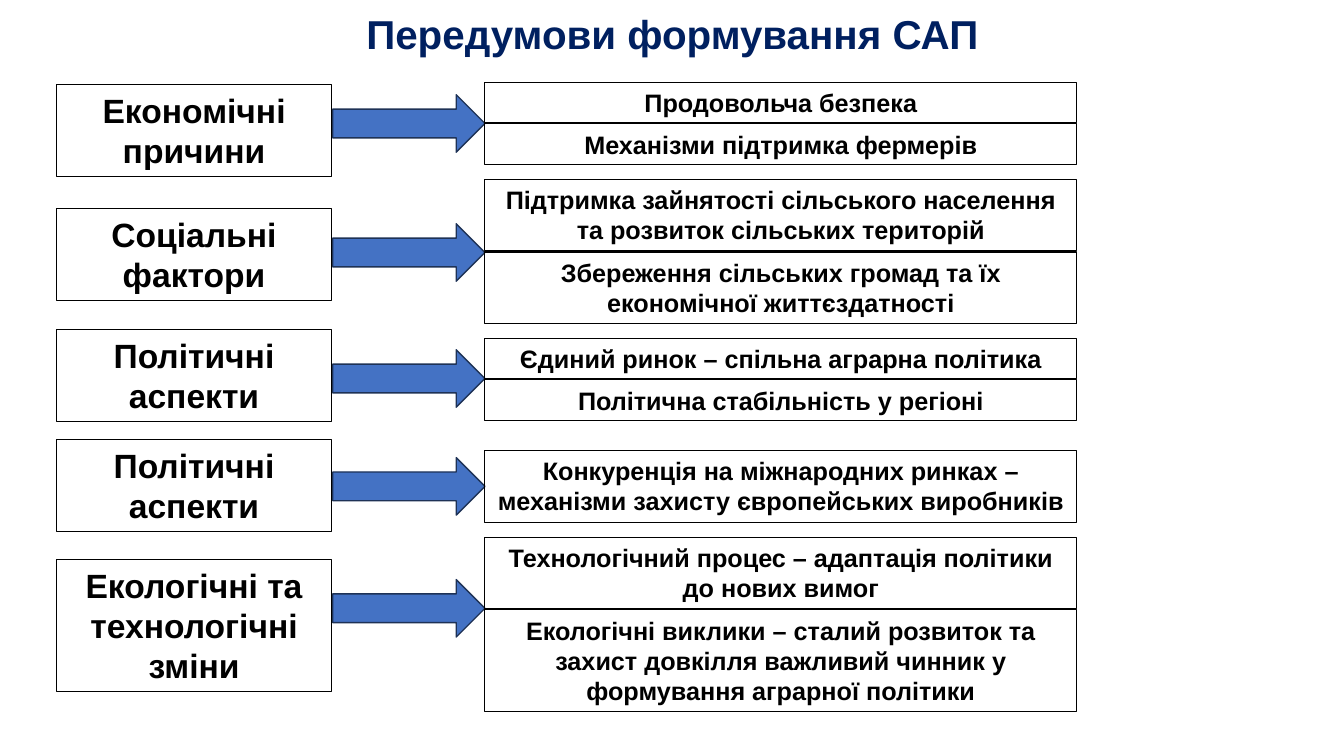
from pptx import Presentation
from pptx import util as u
from pptx.dml.color import RGBColor
from pptx.enum import shapes, text

COLORS = {"title": "002060", "text": "000000", "border": "000000",
          "arrow": "4472C4", "arrow_line": "1E3256"}
FORMATS = {
    "title": {"name": "Arial", "size": u.Pt(28.8), "bold": True},
    "cause": {"name": "Arial", "size": u.Pt(24), "bold": True},
    "detail": {"name": "Arial", "size": u.Pt(18), "bold": True},
}
CAUSE_X, CAUSE_W = 0.56, 2.73
ARROW_X, ARROW_W, ARROW_H = 3.3, 1.51, 0.57
DETAIL_X, DETAIL_W, DETAIL_GAP = 4.81, 5.87, 0.01

GROUPS = [
    ("Економічні причини", 0.84, 0.91, 0.94, 0.82, [
        ("Продовольча безпека", 0.4),
        ("Механізми підтримка фермерів", 0.4)]),
    ("Соціальні фактори", 2.07, 0.91, 2.22, 1.78, [
        ("Підтримка зайнятості сільського населення та розвиток сільських територій", 0.71),
        ("Збереження сільських громад та їх економічної життєздатності", 0.71)]),
    ("Політичні аспекти", 3.27, 0.91, 3.47, 3.36, [
        ("Єдиний ринок – спільна аграрна політика", 0.4),
        ("Політична стабільність у регіоні", 0.4)]),
    ("Політичні аспекти", 4.36, 0.91, 4.54, 4.47, [
        ("Конкуренція на міжнародних ринках – механізми захисту європейських виробників", 0.71)]),
    ("Екологічні та технологічні зміни", 5.55, 1.31, 5.75, 5.33, [
        ("Технологічний процес – адаптація політики до нових вимог", 0.71),
        ("Екологічні виклики – сталий розвиток та захист довкілля важливий чинник у "
         "формування аграрної політики", 1.01)]),
]


def write(sp, content, style, color):
    tf = sp.text_frame
    tf.word_wrap = True
    p = tf.paragraphs[0]
    p.alignment = text.PP_ALIGN.CENTER
    r = p.add_run()
    r.text = content
    for key, value in FORMATS[style].items():
        setattr(r.font, key, value)
    r.font.color.rgb = RGBColor.from_string(COLORS[color])
    return tf


def add_box(x, y, w, h, content, style):
    sp = s.shapes.add_shape(shapes.MSO_SHAPE.RECTANGLE, *map(u.Inches, (x, y, w, h)))
    sp.shadow.inherit = False
    sp.fill.background()
    sp.line.color.rgb = RGBColor.from_string(COLORS["border"])
    sp.line.width = u.Pt(0.75)
    tf = write(sp, content, style, "text")
    tf.vertical_anchor = text.MSO_ANCHOR.TOP
    tf.auto_size = text.MSO_AUTO_SIZE.SHAPE_TO_FIT_TEXT


prs = Presentation()
prs.slide_width = u.Inches(13.33)
prs.slide_height = u.Inches(7.5)
s = prs.slides.add_slide(prs.slide_layouts[6])

title = s.shapes.add_textbox(*map(u.Inches, (0.92, 0.08, 11.5, 0.57)))
tf = write(title, "Передумови формування САП", "title", "title")
tf.vertical_anchor = text.MSO_ANCHOR.MIDDLE
tf.paragraphs[0].line_spacing = 0.9

for cause, cause_y, cause_h, arrow_y, detail_y, details in GROUPS:
    add_box(CAUSE_X, cause_y, CAUSE_W, cause_h, cause, "cause")
    arrow = s.shapes.add_shape(shapes.MSO_SHAPE.RIGHT_ARROW,
                               *map(u.Inches, (ARROW_X, arrow_y, ARROW_W, ARROW_H)))
    arrow.shadow.inherit = False
    arrow.fill.solid()
    arrow.fill.fore_color.rgb = RGBColor.from_string(COLORS["arrow"])
    arrow.line.color.rgb = RGBColor.from_string(COLORS["arrow_line"])
    arrow.line.width = u.Pt(1)
    for detail, detail_h in details:
        add_box(DETAIL_X, detail_y, DETAIL_W, detail_h, detail, "detail")
        detail_y += detail_h + DETAIL_GAP

prs.save("out.pptx")
